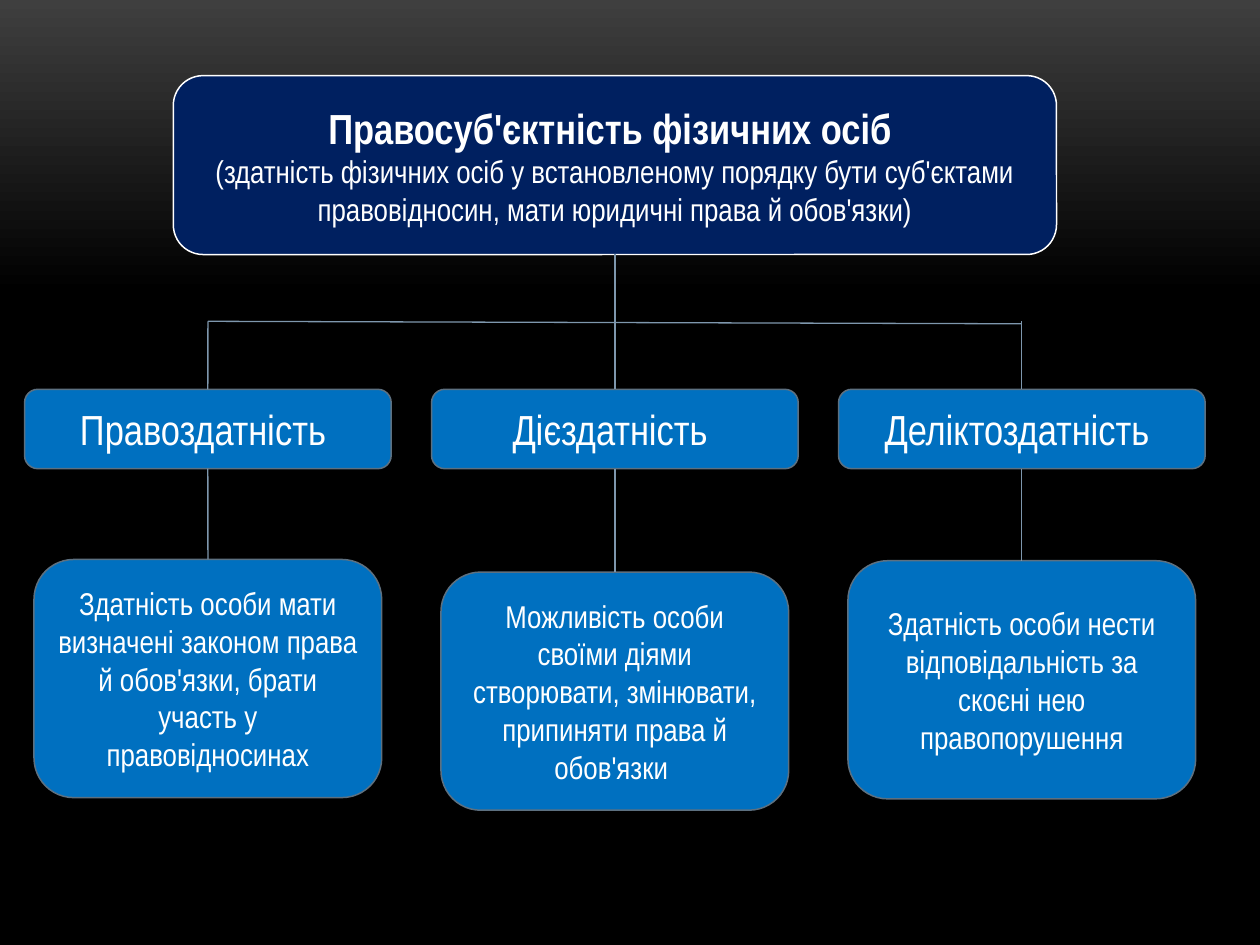
from lxml import etree
from pptx import Presentation
from pptx.dml.color import RGBColor
from pptx.enum.shapes import MSO_CONNECTOR, MSO_SHAPE
from pptx.enum.text import MSO_ANCHOR, PP_ALIGN
from pptx.oxml.ns import qn
from pptx.util import Inches, Pt

ROUNDED = MSO_SHAPE.ROUNDED_RECTANGLE
STRAIGHT = MSO_CONNECTOR.STRAIGHT
MIDDLE = MSO_ANCHOR.MIDDLE
CENTER = PP_ALIGN.CENTER
TOP, BOTTOM = 0, 2

THEME = {
    "font": "Arial Narrow",
    "heading": Pt(24),
    "body": Pt(18),
    "outline": Pt(0.85),
    "connector_width": Pt(0.75),
    "white": RGBColor.from_string("FFFFFF"),
    "navy": RGBColor.from_string("002060"),
    "blue": RGBColor.from_string("0070C0"),
    "edge": RGBColor.from_string("5D7080"),
    "connector": RGBColor.from_string("7E97AD"),
    "glow": RGBColor.from_string("3F3F3F"),
    "black": RGBColor.from_string("000000"),
}

# Grid in inches: three columns by their centres, and rows by their tops
COLUMN_PITCH = 3.23
COLUMN_CENTERS = [1.65 + COLUMN_PITCH * column for column in range(3)]
TITLE_TOP, TITLE_WIDTH, TITLE_HEIGHT = 0.6, 7.01, 1.42
BRANCH_TOP, BRANCH_DROP = 2.55, 0.02
TERM_TOP, TERM_WIDTH, TERM_HEIGHT = 3.09, 2.91, 0.63
MEANING_WIDTH, MEANING_HEIGHT = 2.76, 1.89

COLUMNS = [
    ("Правоздатність ", 4.44,
     "Здатність особи мати визначені законом права й обов'язки, "
     "брати участь у правовідносинах"),
    ("Дієздатність ", 4.54,
     "Можливість особи своїми діями створювати, змінювати, "
     "припиняти права й обов'язки "),
    ("Деліктоздатність ", 4.45,
     "Здатність особи нести відповідальність за скоєні нею правопорушення"),
]


def add_box(center, top, width, height, fill, edge, lines):
    """Add a rounded box centred on a column; lines hold (text, size, bold)."""
    box = slide.shapes.add_shape(
        ROUNDED, Inches(center - width / 2), Inches(top), Inches(width), Inches(height))
    box.shadow.inherit = False
    box.fill.solid()
    box.fill.fore_color.rgb = fill
    box.line.color.rgb = edge
    box.line.width = THEME["outline"]
    frame = box.text_frame
    frame.word_wrap = True
    frame.vertical_anchor = MIDDLE
    for index, (text, size, bold) in enumerate(lines):
        paragraph = frame.add_paragraph() if index else frame.paragraphs[0]
        paragraph.alignment = CENTER
        run = paragraph.add_run()
        run.text = text
        run.font.name = THEME["font"]
        run.font.size = size
        run.font.bold = bold
        run.font.color.rgb = THEME["white"]
    return box


def add_line(start, end, upper=None, lower=None):
    """Draw a line, joined to the box above and the box below where given."""
    connector = slide.shapes.add_connector(
        STRAIGHT, *(Inches(length) for length in start + end))
    if upper is not None:
        connector.begin_connect(upper, BOTTOM)
    if lower is not None:
        connector.end_connect(lower, TOP)
    connector.line.color.rgb = THEME["connector"]
    connector.line.width = THEME["connector_width"]
    etree.SubElement(connector._element.spPr, qn("a:effectLst"))


presentation = Presentation()
presentation.slide_width = Inches(10)
presentation.slide_height = Inches(7.5)
slide = presentation.slides.add_slide(presentation.slide_layouts[6])

# Background: grey fading to black from the top edge
background = slide.background.fill
background.gradient()
background.gradient_angle = 270
for stop, color, position in zip(
        background.gradient_stops, (THEME["glow"], THEME["black"]), (0, 0.31)):
    stop.color.rgb = color
    stop.position = position

# Title box over the middle column
left, middle, right = COLUMN_CENTERS
title = add_box(
    middle, TITLE_TOP, TITLE_WIDTH, TITLE_HEIGHT, THEME["navy"], THEME["white"],
    [("Правосуб'єктність фізичних осіб ", THEME["heading"], True),
     ("(здатність фізичних осіб у встановленому порядку бути суб'єктами "
      "правовідносин, мати юридичні права й обов'язки)", THEME["body"], False)])
add_line((left, BRANCH_TOP), (right, BRANCH_TOP + BRANCH_DROP))

# One term and its meaning per column
for center, (term, meaning_top, meaning) in zip(COLUMN_CENTERS, COLUMNS):
    term_box = add_box(
        center, TERM_TOP, TERM_WIDTH, TERM_HEIGHT, THEME["blue"], THEME["edge"],
        [(term, THEME["heading"], False)])
    meaning_box = add_box(
        center, meaning_top, MEANING_WIDTH, MEANING_HEIGHT, THEME["blue"], THEME["edge"],
        [(meaning, THEME["body"], False)])
    add_line((center, BRANCH_TOP), (center, TERM_TOP),
             upper=title if center == middle else None, lower=term_box)
    add_line((center, TERM_TOP + TERM_HEIGHT), (center, meaning_top),
             upper=term_box, lower=meaning_box)

presentation.save("out.pptx")
